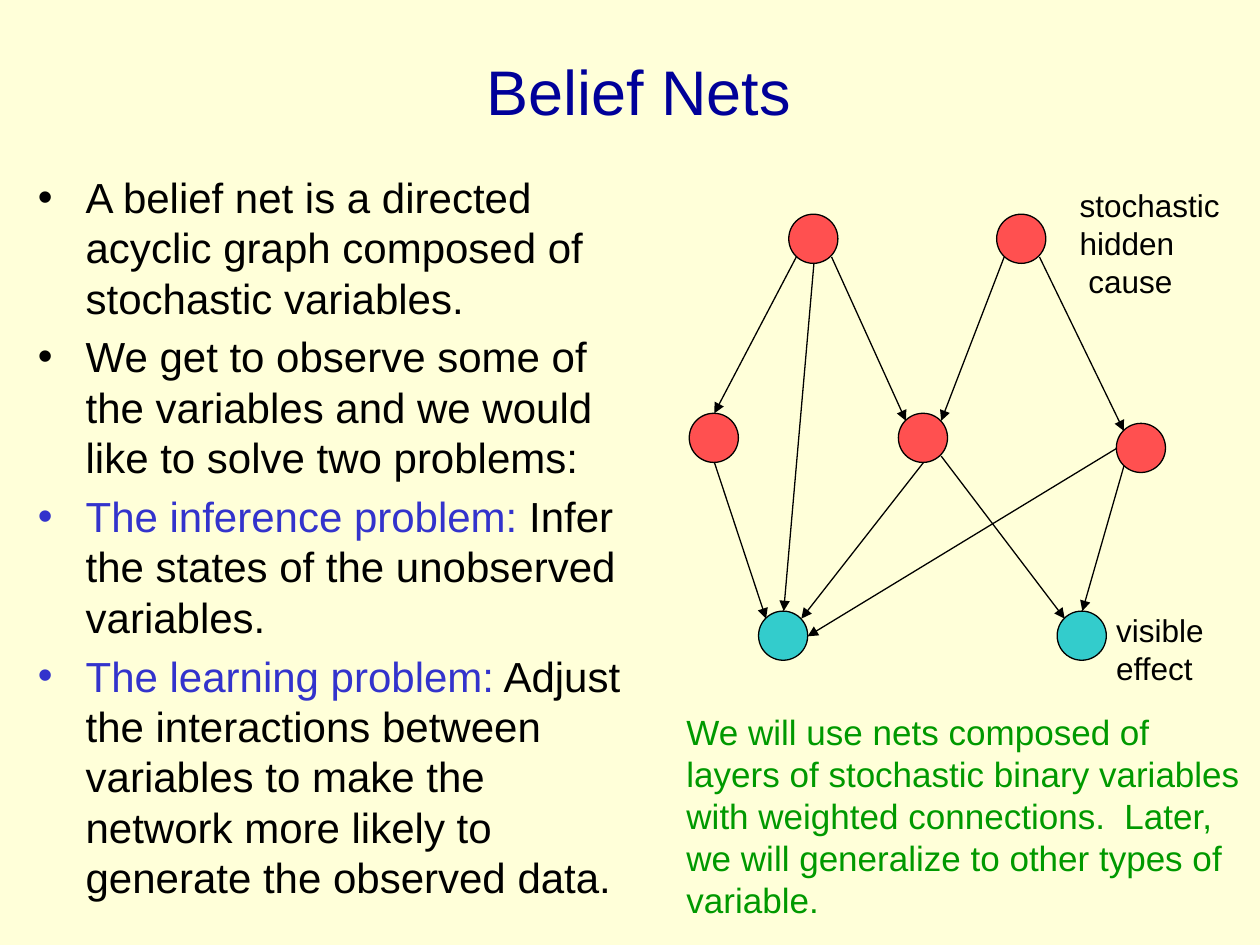
from dataclasses import dataclass

from lxml import etree
from pptx import Presentation
from pptx import util as u
from pptx.dml.color import RGBColor
from pptx.enum import shapes, text
from pptx.oxml.ns import qn

PX = 9144  # EMU per px, 100 px to the inch
DIAMETER = 39
BLACK, BLUE, GREEN = "000000", "3333CC", "009900"
HIDDEN, VISIBLE = "FF5050", "33CCCC"
# Offsets from the top left of a node, on its rim
RIM = {
    "n": (20, 0), "ne": (34, 6), "e": (39, 20), "se": (34, 34),
    "s": (20, 39), "sw": (6, 34), "w": (0, 20), "nw": (6, 6),
}


@dataclass(frozen=True)
class Node:
    left: int
    top: int
    fill: str = HIDDEN

    def rim(self, side: str) -> tuple[int, int]:
        dx, dy = RIM[side]
        return px(self.left + dx), px(self.top + dy)


@dataclass(frozen=True)
class Edge:
    cause: str
    leaves: str
    effect: str
    enters: str


@dataclass(frozen=True)
class Label:
    box: tuple[int, int, int, int]
    lines: tuple[str, ...]
    size: int = 18
    color: str = BLACK
    wrap: bool = True


NODES = {
    "top left": Node(626, 170),
    "top right": Node(791, 170),
    "mid left": Node(547, 328),
    "mid centre": Node(713, 328),
    "mid right": Node(886, 336),
    "visible left": Node(602, 485, VISIBLE),
    "visible right": Node(839, 485, VISIBLE),
}
EDGES = [
    Edge("top left", "sw", "mid left", "n"),
    Edge("top left", "s", "visible left", "n"),
    Edge("top left", "se", "mid centre", "nw"),
    Edge("top right", "sw", "mid centre", "ne"),
    Edge("top right", "se", "mid right", "nw"),
    Edge("mid left", "s", "visible left", "nw"),
    Edge("mid centre", "s", "visible left", "ne"),
    Edge("mid centre", "se", "visible right", "nw"),
    Edge("mid right", "w", "visible left", "e"),
    Edge("mid right", "sw", "visible right", "n"),
]
LABELS = [
    Label((847, 143, 138, 100), ("stochastic", "hidden", " cause")),
    Label((876, 480, 97, 70), ("visible", "effect"), wrap=False),
    Label((535, 559, 464, 178), (
        "We will use nets composed of layers of stochastic binary variables "
        "with weighted connections.  Later, we will generalize to other types "
        "of variable.",), 20, GREEN),
]
# Each bullet: highlighted lead, then plain text
BULLETS = [
    ("", "A belief net is a directed acyclic graph composed of stochastic variables."),
    ("", "We get to observe some of the variables and we would like to solve "
         "two problems:"),
    ("The inference problem:", " Infer the states of the unobserved variables."),
    ("The learning problem:", " Adjust the interactions between variables to make "
     "the network more likely to generate the observed data."),
]


def px(length: int) -> u.Emu:
    return u.Emu(length * PX)


def rgb(color: str) -> RGBColor:
    return RGBColor.from_string(color)


def apply(target, **formats) -> None:
    for name, value in formats.items():
        setattr(target, name, value)


def place(shape, box: tuple[int, int, int, int]) -> None:
    apply(shape, **dict(zip(("left", "top", "width", "height"), map(px, box))))


def add_run(paragraph, words: str, size: int, color: str) -> None:
    run = paragraph.add_run()
    run.text = words
    apply(run.font, name="Arial", size=u.Pt(size))
    run.font.color.rgb = rgb(color)


def outline(line) -> None:
    line.color.rgb = rgb(BLACK)
    line.width = u.Pt(0.75)


def draw_title(title) -> None:
    place(title, (50, 9, 900, 125))
    apply(title.text_frame, vertical_anchor=text.MSO_ANCHOR.MIDDLE,
          auto_size=text.MSO_AUTO_SIZE.NONE)
    heading = title.text_frame.paragraphs[0]
    heading.alignment = text.PP_ALIGN.CENTER
    add_run(heading, " Belief Nets", 36, "000099")


def draw_bullets(body) -> None:
    place(body, (20, 131, 488, 615))
    frame = body.text_frame
    frame.auto_size = text.MSO_AUTO_SIZE.NONE
    for index, (lead, rest) in enumerate(BULLETS):
        bullet = frame.add_paragraph() if index else frame.paragraphs[0]
        properties = bullet._p.get_or_add_pPr()
        properties.set("marL", str(px(38)))
        properties.set("indent", str(-px(38)))
        etree.SubElement(properties, qn("a:buChar"), char="•")
        if lead:
            add_run(bullet, lead, 24, BLUE)
        add_run(bullet, rest, 24, BLACK)


def draw_node(canvas, node: Node) -> None:
    circle = canvas.add_shape(shapes.MSO_SHAPE.OVAL, px(node.left), px(node.top),
                              px(DIAMETER), px(DIAMETER))
    circle.shadow.inherit = False
    circle.fill.solid()
    circle.fill.fore_color.rgb = rgb(node.fill)
    outline(circle.line)


def draw_edge(canvas, edge: Edge) -> None:
    start = NODES[edge.cause].rim(edge.leaves)
    end = NODES[edge.effect].rim(edge.enters)
    arrow = canvas.add_connector(shapes.MSO_CONNECTOR.STRAIGHT, *start, *end)
    outline(arrow.line)
    etree.SubElement(arrow.line._get_or_add_ln(), qn("a:tailEnd"), type="triangle")
    etree.SubElement(arrow._element.spPr, qn("a:effectLst"))


def draw_label(canvas, label: Label) -> None:
    frame = canvas.add_textbox(*map(px, label.box)).text_frame
    frame.word_wrap = label.wrap
    for index, words in enumerate(label.lines):
        line = frame.add_paragraph() if index else frame.paragraphs[0]
        add_run(line, words, label.size, label.color)


def main() -> None:
    deck = Presentation()
    apply(deck, slide_width=px(1000), slide_height=px(750))
    slide = deck.slides.add_slide(deck.slide_layouts[1])
    slide.background.fill.solid()
    slide.background.fill.fore_color.rgb = rgb("FFFFD9")
    draw_title(slide.shapes.title)
    draw_bullets(slide.placeholders[1])
    for node in NODES.values():
        draw_node(slide.shapes, node)
    for edge in EDGES:
        draw_edge(slide.shapes, edge)
    for label in LABELS:
        draw_label(slide.shapes, label)
    deck.save("out.pptx")


if __name__ == "__main__":
    main()
